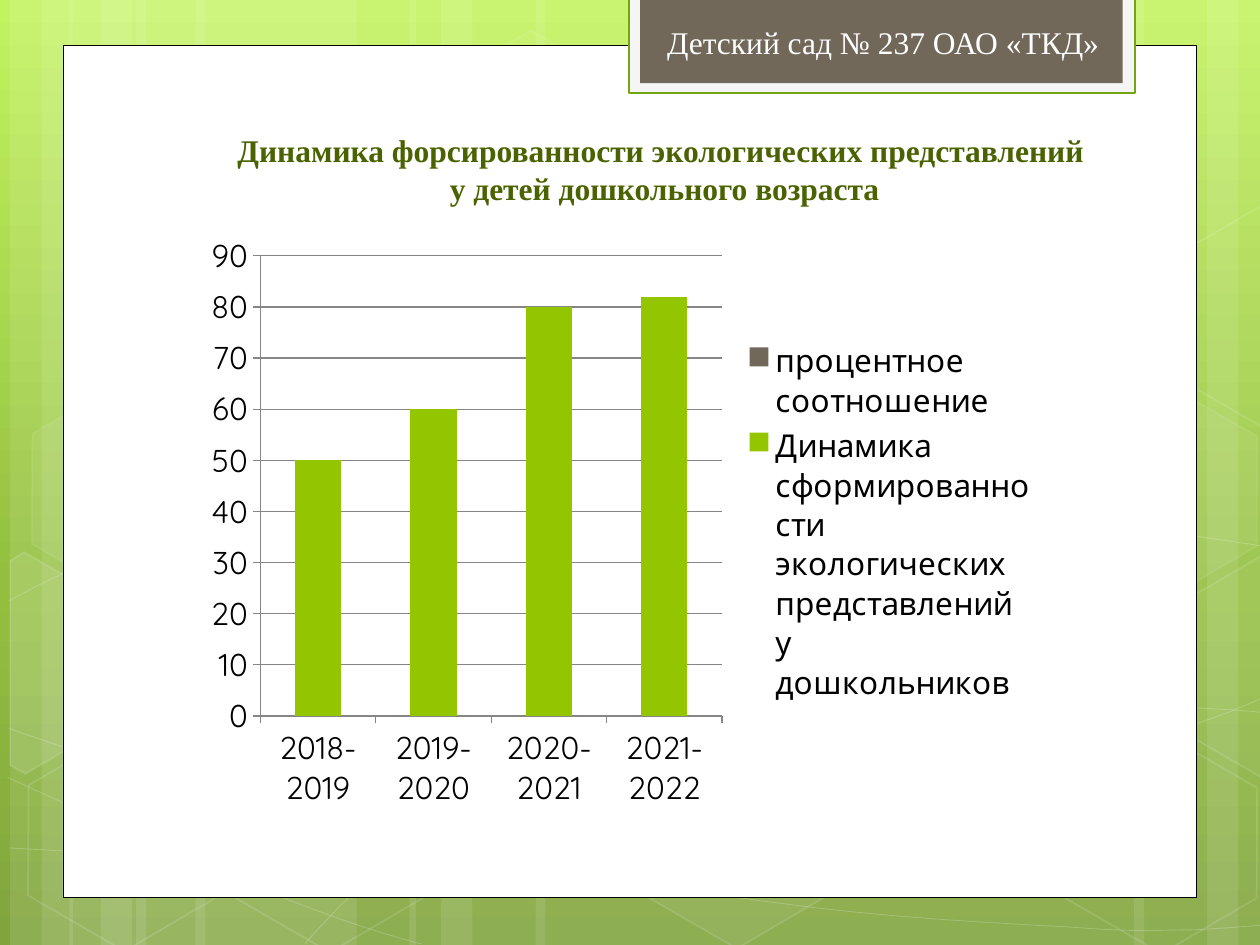
from math import cos, radians, sin

from lxml.etree import SubElement
from pptx import Presentation
from pptx.chart.data import CategoryChartData
from pptx.dml.color import RGBColor
from pptx.enum.chart import XL_CHART_TYPE, XL_LEGEND_POSITION, XL_TICK_MARK
from pptx.enum.shapes import MSO_SHAPE
from pptx.enum.text import MSO_ANCHOR, MSO_AUTO_SIZE, PP_ALIGN
from pptx.oxml import parse_xml
from pptx.oxml.ns import nsdecls, qn
from pptx.util import Inches, Pt

COLORS = {
    "white": "FFFFFF", "black": "000000", "tab": "F5F5F5", "tab_line": "74A510",
    "brown": "71685A", "heading": "4A6300", "green": "94C600", "grid": "868686",
    "top": "C3F35F", "middle": "93BF3F", "bottom": "81A53E",
}


def paint(shape, fill=None, fill_alpha=100, line=None, width=1, line_alpha=100):
    """Set fill and line by colour name, with opacity in percent."""
    shape.shadow.inherit = False
    for target, color, alpha in ((shape.fill, fill, fill_alpha),
                                 (shape.line.fill, line, line_alpha)):
        if color is None or alpha == 0:
            target.background()
            continue
        target.solid()
        target.fore_color.rgb = RGBColor.from_string(COLORS[color])
        if alpha < 100:
            parent = shape.element.spPr if target is shape.fill else shape.line._ln
            rgb = parent.find(qn("a:solidFill")).find(qn("a:srgbClr"))
            SubElement(rgb, qn("a:alpha"), val=str(alpha * 1000))
    if line:
        shape.line.width = Pt(width)


def add_outline(shapes, points, close):
    corners = [(Inches(x), Inches(y)) for x, y in points]
    builder = shapes.build_freeform(*corners[0])
    builder.add_line_segments(corners[1:], close=close)
    return builder.convert_to_shape()


presentation = Presentation()
presentation.slide_width = Inches(10)
presentation.slide_height = Inches(7.5)
layout = presentation.slide_layouts[5]
slide = presentation.slides.add_slide(layout)
shapes = slide.shapes

# Background gradient, top to bottom
slide.background.fill.gradient()
gradient = slide.background.fill._fill._gradFill
for child in list(gradient):
    gradient.remove(child)
stops = "".join(
    f'<a:gs pos="{position * 1000}"><a:srgbClr val="{COLORS[name]}"/></a:gs>'
    for position, name in ((0, "top"), (62, "middle"), (100, "bottom")))
gradient.append(parse_xml(f'<a:gsLst {nsdecls("a")}>{stops}</a:gsLst>'))
gradient.append(parse_xml(f'<a:lin {nsdecls("a")} ang="5400000" scaled="0"/>'))

# Translucent vertical strips: left, width
decoration = shapes.add_group_shape()
strips = [
    (1.08, 1.75), (0.08, 0.5), (0.33, 0.83), (1.55, 1.75), (0.55, 0.5), (0.8, 0.83),
    (7.33, 1.75), (9.58, 0.5), (9, 0.83), (4.25, 3.08), (3.25, 0.5), (3.5, 0.83),
]
for left, width in strips:
    strip = decoration.shapes.add_shape(MSO_SHAPE.RECTANGLE, Inches(left), 0,
                                        Inches(width), Inches(7.5))
    paint(strip, "white", 10)

# Waves: a start point, then three Bezier points per segment
waves = [
    [(0.07, 6.73), (0.61, 6.76), (1.15, 6.79), (1.9, 6.78), (2.65, 6.77), (3.58, 6.75),
     (4.58, 6.65), (5.58, 6.55), (7, 6.36), (7.92, 6.17), (8.83, 5.98), (9.77, 5.68),
     (10.07, 5.51)],
    [(0.07, 4.77), (0.36, 4.61), (0.65, 4.46), (1.21, 4.31), (1.78, 4.16), (2.59, 3.94),
     (3.47, 3.87), (4.36, 3.8), (5.44, 3.79), (6.54, 3.87), (7.64, 3.95), (9.47, 4.26),
     (10.07, 4.34)],
    [(0.06, 6.17), (1.27, 6.72), (2.47, 7.27), (3.34, 7.49)],
    [(0.07, 5.78), (0.38, 5.89), (0.7, 6), (1.28, 6.16), (1.86, 6.31), (2.73, 6.56),
     (3.57, 6.73), (4.4, 6.9), (5.45, 7.08), (6.28, 7.18), (7.11, 7.29), (8, 7.33),
     (8.53, 7.36), (9.05, 7.4), (9.19, 7.38), (9.45, 7.38), (9.71, 7.37), (9.89, 7.35),
     (10.07, 7.34)],
    [(2.42, 7.49), (2.6, 7.29), (2.78, 7.09), (3.02, 6.91), (3.26, 6.73), (3.6, 6.53),
     (3.88, 6.39), (4.16, 6.25), (4.33, 6.19), (4.7, 6.09), (5.06, 5.99), (5.73, 5.85),
     (6.08, 5.78), (6.44, 5.71), (6.49, 5.71), (6.8, 5.69), (7.11, 5.66), (7.6, 5.63),
     (7.94, 5.62), (8.29, 5.61), (8.86, 5.62), (8.86, 5.62), (8.86, 5.62), (9.53, 5.62),
     (9.53, 5.62), (9.71, 5.63), (9.88, 5.64), (9.97, 5.65), (10.06, 5.66), (10.03, 5.65),
     (10.06, 5.66)],
]
for points in waves:
    wave = add_outline(decoration.shapes, points, False)
    paint(wave, line="white", width=0.5, line_alpha=20)
    # Join every three line segments into one Bezier curve
    segments = list(wave.element.iter(qn("a:lnTo")))
    outline = segments[0].getparent()
    for start in range(0, len(segments), 3):
        curve = SubElement(outline, qn("a:cubicBezTo"))
        for segment in segments[start:start + 3]:
            curve.append(segment[0])
            outline.remove(segment)

# Hexagons: left, top, fill opacity, line opacity
hexagons = [
    (3.34, 0.36, 4, 8), (4.97, 5.89, 6, 12), (0.11, 5.91, 0, 12), (0.14, 3.12, 7, 8),
    (1.74, 5.92, 0, 12), (7.53, 4.53, 10, 12), (8.34, 5.93, 0, 12), (8.34, 3.14, 7, 8),
]
TILT = 30
for left, top, fill_alpha, line_alpha in hexagons:
    hexagon = decoration.shapes.add_shape(MSO_SHAPE.HEXAGON, Inches(left), Inches(top),
                                          Inches(1.75), Inches(1.52))
    hexagon.rotation = TILT
    hexagon.adjustments[0] = 0.285
    paint(hexagon, "white", fill_alpha, "white", 1, line_alpha)

# Hexagons cut by the slide edge: fill opacity, centre, corners as they appear when tilted
cut_hexagons = [
    (10, (0.36, 5.35), [(0.08, 4.45), (0.19, 4.38), (0.96, 4.82), (0.95, 5.7),
                        (0.2, 6.14), (0.08, 6.07)]),
    (4, (9.85, 5.2), [(9.26, 4.85), (10.01, 4.41), (10.09, 4.46), (10.09, 6.13),
                      (10.02, 6.17), (9.26, 5.73)]),
    (0, (9.85, 2.41), [(9.26, 2.07), (10.01, 1.63), (10.1, 1.68), (10.09, 3.35),
                       (10.02, 3.39), (9.26, 2.95)]),
]
cosine, sine = cos(radians(TILT)), sin(radians(TILT))
for fill_alpha, (center_x, center_y), corners in cut_hexagons:
    upright = [(center_x + (x - center_x) * cosine + (y - center_y) * sine,
                center_y - (x - center_x) * sine + (y - center_y) * cosine)
               for x, y in corners]
    cut_hexagon = add_outline(decoration.shapes, upright, True)
    cut_hexagon.rotation = TILT
    paint(cut_hexagon, "white", fill_alpha, "white", 1, 12)

# White page and the tab at its top
panels = [
    ((0.5, 0.36, 9, 6.76), {"fill": "white", "line": "black", "width": 0.5}),
    ((4.99, -0.02, 4.02, 0.76), {"fill": "tab", "line": "tab_line", "width": 1.25}),
    ((5.08, -0.02, 3.83, 0.68), {"fill": "brown"}),
]
for box, style in panels:
    paint(shapes.add_shape(MSO_SHAPE.RECTANGLE, *map(Inches, box)), **style)

# The decoration belongs to the layout, which keeps only its title placeholder
layout_tree = layout.placeholders[0].element.getparent()
for placeholder in list(layout.placeholders)[1:]:
    layout_tree.remove(placeholder.element)
for shape in list(shapes):
    if not shape.is_placeholder:
        layout_tree.append(shape.element)

# Tab caption and heading
caption = shapes.add_textbox(Inches(5.16), Inches(0.13), Inches(3.7), Inches(0.4))
title = shapes.title
title.left, title.top, title.width, title.height = map(Inches, (1.14, 0.99, 8.27, 0.71))
texts = [
    (caption, ["Детский сад № 237 ОАО «ТКД»"], "white", False),
    (title, ["Динамика форсированности экологических представлений ",
             "у детей дошкольного возраста"], "heading", True),
]
for shape, lines, color, bold in texts:
    frame = shape.text_frame
    frame.text = "\n".join(lines)
    frame.word_wrap = True
    frame.auto_size = MSO_AUTO_SIZE.SHAPE_TO_FIT_TEXT
    frame.vertical_anchor = MSO_ANCHOR.TOP
    font_format = {"name": "Times New Roman", "size": Pt(18), "bold": bold}
    for paragraph in frame.paragraphs:
        paragraph.alignment = PP_ALIGN.CENTER
        for run in paragraph.runs:
            for attribute, value in font_format.items():
                setattr(run.font, attribute, value)
            run.font.color.rgb = RGBColor.from_string(COLORS[color])

# Stacked column chart
chart_data = CategoryChartData()
chart_data.categories = ["2018-2019", "2019-2020", "2020-2021", "2021-2022"]
chart_data.add_series(
    "Динамика сформированности экологических представлений у дошкольников",
    [50, 60, 80, 82])
chart_data.add_series("процентное соотношение", [None] * 4)
chart = shapes.add_chart(XL_CHART_TYPE.COLUMN_STACKED, Inches(1.54), Inches(1.78),
                         Inches(6.8), Inches(4.72), chart_data).chart
chart.has_title = False
for attribute, value in {"name": "Quicksand", "size": Pt(18)}.items():
    setattr(chart.font, attribute, value)
chart.font.color.rgb = RGBColor.from_string(COLORS["black"])
chart.has_legend = True
chart.legend.position = XL_LEGEND_POSITION.RIGHT
chart.legend.include_in_layout = False
plot = chart.plots[0]
plot.gap_width, plot.overlap, plot.vary_by_categories = 150, 100, False
for series, color in zip(plot.series, ("green", "brown")):
    series.format.fill.solid()
    series.format.fill.fore_color.rgb = RGBColor.from_string(COLORS[color])
category_axis, value_axis = chart.category_axis, chart.value_axis
value_axis.has_major_gridlines = True
for axis in (category_axis, value_axis):
    axis.major_tick_mark = XL_TICK_MARK.OUTSIDE
for lined in (category_axis, value_axis, value_axis.major_gridlines):
    lined.format.line.color.rgb = RGBColor.from_string(COLORS["grid"])
    lined.format.line.width = Pt(0.75)

presentation.save("out.pptx")
